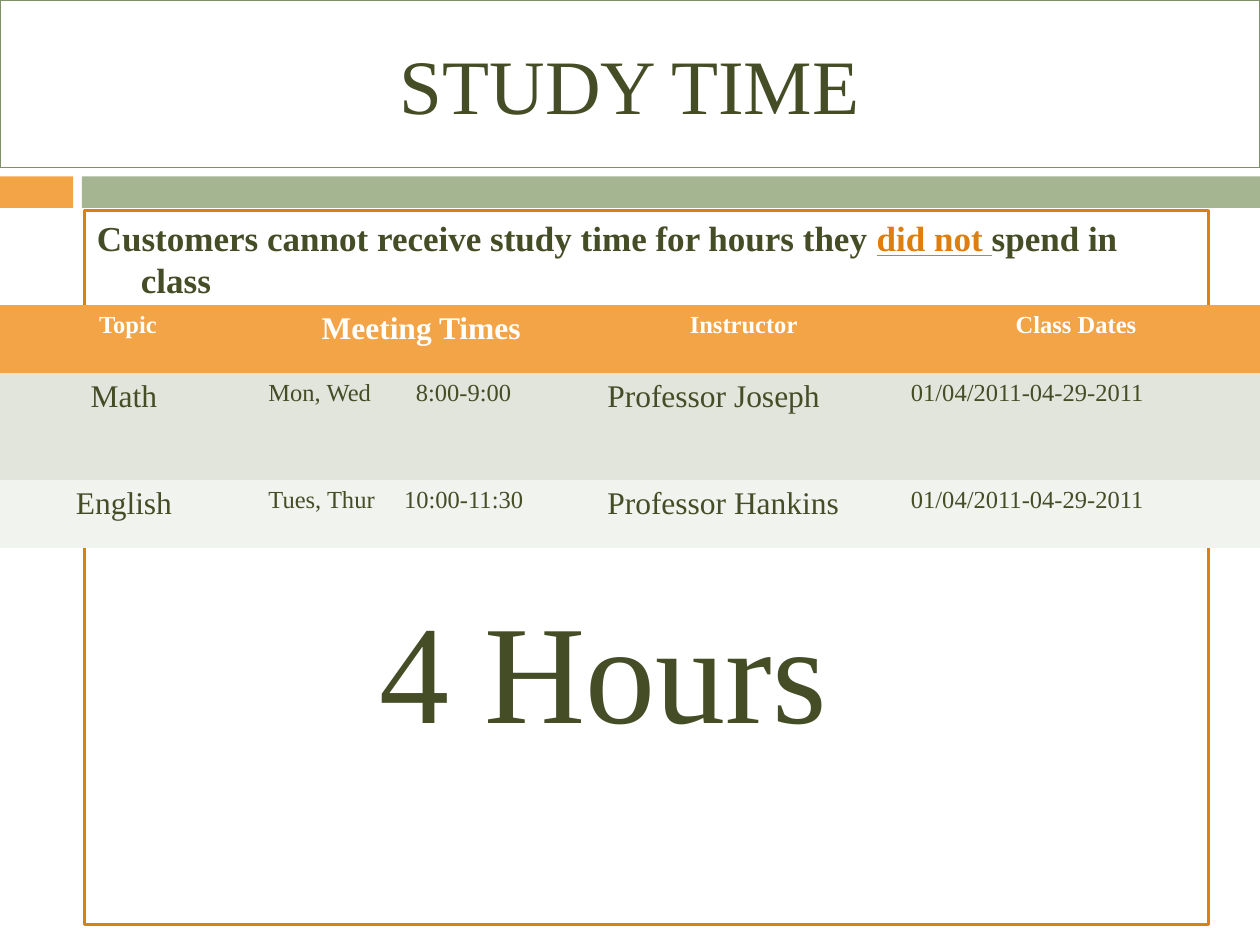
from lxml.etree import SubElement
from pptx import Presentation
from pptx.dml.color import RGBColor
from pptx.enum.shapes import MSO_SHAPE
from pptx.enum.text import MSO_ANCHOR, PP_ALIGN
from pptx.oxml.ns import qn
from pptx.util import Inches, Pt

FONT = "Times New Roman"
WHITE = RGBColor(0xFF, 0xFF, 0xFF)
OLIVE = RGBColor(0x44, 0x4D, 0x26)
ORANGE = RGBColor(0xF3, 0xA4, 0x47)
RUST = RGBColor(0xDD, 0x7E, 0x0E)
SAGE = RGBColor(0xA5, 0xB5, 0x92)
MOSS = RGBColor(0x7D, 0x92, 0x63)
ROW_FILLS = [ORANGE, RGBColor(0xE1, 0xE5, 0xDC), RGBColor(0xF0, 0xF3, 0xEE)]

COL_WIDTHS = [2.03, 2.69, 2.41, 2.87]
ROW_HEIGHTS = [0.54, 0.85, 0.54]
ROWS = [
    ["Topic", "Meeting Times ", "Instructor ", "Class Dates "],
    ["Math ", "Mon, Wed\t8:00-9:00", "Professor Joseph", "01/04/2011-04-29-2011"],
    ["English ", "Tues, Thur\t10:00-11:30", "Professor Hankins", "01/04/2011-04-29-2011"],
]
HEADER_SIZES = [14, 18, 14, 14]
BODY_SIZES = [18, 14, 18, 14]
TIME_TAB = 1.55  # centre of the hours, from the cell's text edge


def box(*lengths):
    return [Inches(v) for v in lengths]


def add_run(p, text, size, color=OLIVE, **formats):
    r = p.add_run()
    r.text = text
    r.font.color.rgb = color
    for name, value in {"name": FONT, "size": Pt(size), **formats}.items():
        setattr(r.font, name, value)


def add_rect(s, at, fill=None, line=None, width=0):
    sp = s.shapes.add_shape(MSO_SHAPE.RECTANGLE, *box(*at))
    sp.shadow.inherit = False
    if fill is None:
        sp.fill.background()
    else:
        sp.fill.solid()
        sp.fill.fore_color.rgb = fill
    if line is None:
        sp.line.fill.background()
    else:
        sp.line.color.rgb = line
        sp.line.width = Pt(width)
    return sp


def set_title(s, text):
    sp = s.shapes.title
    sp.left, sp.top, sp.width, sp.height = box(0, 0, 10, 1.33)
    sp.line.color.rgb = MOSS
    sp.line.width = Pt(0.75)
    sp.text_frame.vertical_anchor = MSO_ANCHOR.MIDDLE
    p = sp.text_frame.paragraphs[0]
    p.alignment = PP_ALIGN.CENTER
    add_run(p, text, 44)


def add_rule_panel(s):
    sp = add_rect(s, (0.67, 1.67, 8.92, 5.67), line=RUST, width=1.5)
    tf = sp.text_frame
    tf.vertical_anchor = MSO_ANCHOR.TOP
    p = tf.paragraphs[0]
    p.alignment = PP_ALIGN.LEFT
    p.space_before = Pt(7)
    # Hanging indent
    pPr = p._p.get_or_add_pPr()
    pPr.set("marL", str(Inches(0.35)))
    pPr.set("indent", str(-Inches(0.35)))
    add_run(p, "Customers cannot receive study time for hours they ", 20, bold=True)
    add_run(p, "did not ", 20, RUST, bold=True, underline=True)
    add_run(p, "spend in class", 20, bold=True)


def add_center_tab(p, pos):
    tabs = SubElement(p._p.get_or_add_pPr(), qn("a:tabLst"))
    SubElement(tabs, qn("a:tab"), pos=str(Inches(pos)), algn="ctr")


def add_schedule(s):
    at = box(0, 2.42, sum(COL_WIDTHS), sum(ROW_HEIGHTS))
    table = s.shapes.add_table(len(ROWS), len(COL_WIDTHS), *at).table
    for col, width in zip(table.columns, COL_WIDTHS):
        col.width = Inches(width)
    for i, texts in enumerate(ROWS):
        table.rows[i].height = Inches(ROW_HEIGHTS[i])
        header = i == 0
        sizes = HEADER_SIZES if header else BODY_SIZES
        for j, text in enumerate(texts):
            cell = table.cell(i, j)
            cell.fill.solid()
            cell.fill.fore_color.rgb = ROW_FILLS[i]
            p = cell.text_frame.paragraphs[0]
            p.alignment = PP_ALIGN.CENTER if header or j == 0 else PP_ALIGN.LEFT
            if "\t" in text:
                add_center_tab(p, TIME_TAB)
            add_run(p, text, sizes[j], WHITE if header else OLIVE, bold=header)
    # Plain cells, without the style's white borders
    table._tbl.tblPr.find(qn("a:tableStyleId")).text = "{2D5ABB26-0587-4C30-8999-92F81FD0307C}"


def add_total(s, text):
    tf = s.shapes.add_textbox(*box(2.08, 4.58, 5.42, 1.45)).text_frame
    tf.word_wrap = True
    p = tf.paragraphs[0]
    p.alignment = PP_ALIGN.CENTER
    add_run(p, text, 80)


def main():
    prs = Presentation()
    prs.slide_width, prs.slide_height = box(10, 7.5)
    s = prs.slides.add_slide(prs.slide_layouts[5])
    # Band under the title
    add_rect(s, (0, 1.4, 0.58, 0.25), fill=ORANGE)
    add_rect(s, (0.65, 1.4, 9.35, 0.25), fill=SAGE)
    set_title(s, "STUDY TIME")
    # Content
    add_rule_panel(s)
    add_schedule(s)
    add_total(s, "4 Hours")
    prs.save("out.pptx")


if __name__ == "__main__":
    main()
